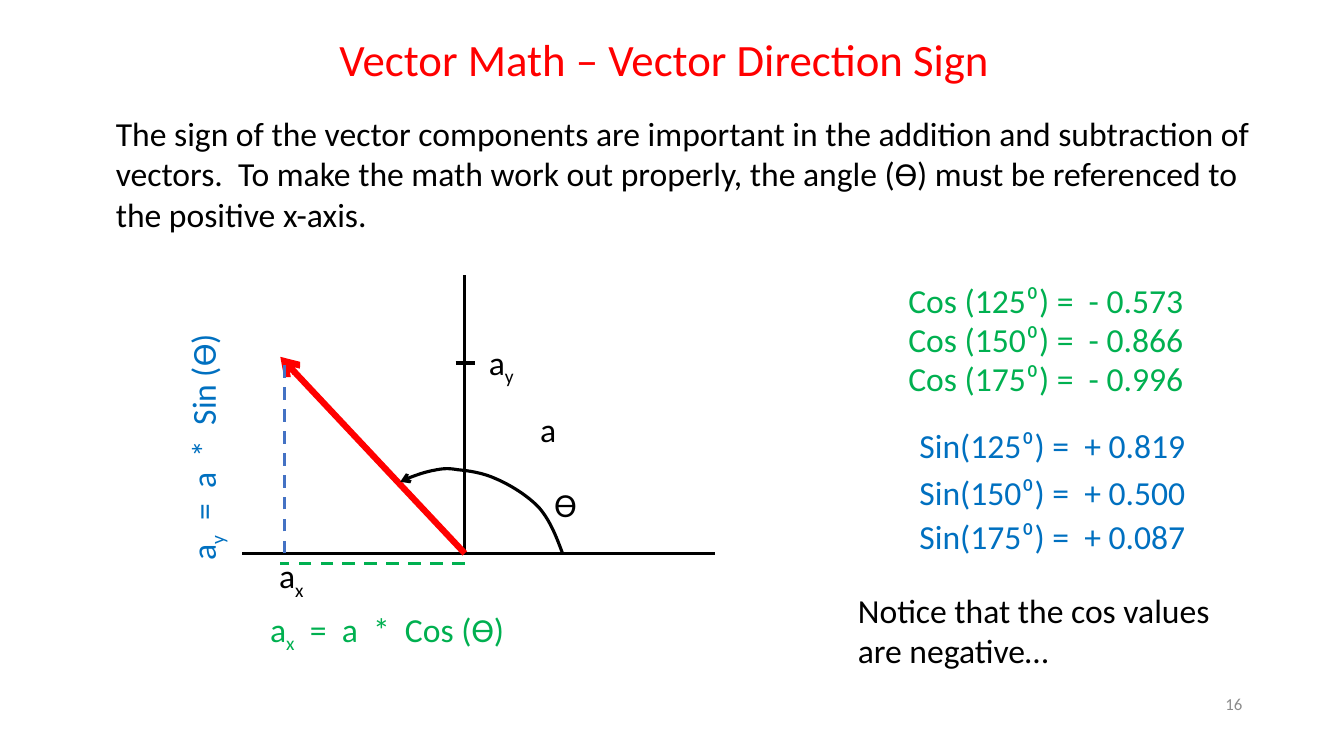
from dataclasses import dataclass

from lxml.etree import SubElement
from pptx import Presentation
from pptx.dml.color import RGBColor
from pptx.enum.dml import MSO_LINE
from pptx.enum.shapes import MSO_CONNECTOR
from pptx.enum.text import MSO_ANCHOR, PP_ALIGN
from pptx.oxml.ns import qn
from pptx.util import Inches, Pt


@dataclass(frozen=True)
class Theme:
    font: str = "Calibri"
    black: str = "000000"
    red: str = "FF0000"
    green: str = "00B050"
    blue: str = "0070C0"
    dash_blue: str = "4472C4"
    grey: str = "8C8C8C"
    title_size: int = 32
    body_size: int = 24
    number_size: int = 12


THEME = Theme()


@dataclass(frozen=True)
class Label:
    text: str
    left: float
    top: float
    width: float
    height: float = 0.5
    color: str = THEME.black
    subscript: str = ""
    rest: str = ""
    rotation: int = 0


@dataclass(frozen=True)
class Stroke:
    start: tuple[float, float]
    end: tuple[float, float]
    color: str = THEME.black
    weight: float = 2.25
    dashed: bool = False
    arrow: bool = False


# Geometry of the diagram
ORIGIN_X, AXIS_Y = 4.61, 5.49
TIP_X, TICK_Y, COS_LINE_Y = 2.78, 3.6, 5.59

STROKES = [
    Stroke((ORIGIN_X, 2.73), (ORIGIN_X, AXIS_Y)),
    Stroke((7.09, AXIS_Y), (2.4, AXIS_Y)),
    Stroke((ORIGIN_X, AXIS_Y), (TIP_X, 3.54), THEME.red, 4.5, arrow=True),
    Stroke((ORIGIN_X, COS_LINE_Y), (TIP_X, COS_LINE_Y), THEME.green, dashed=True),
    Stroke((2.82, AXIS_Y), (2.82, TICK_Y), THEME.dash_blue, dashed=True),
    Stroke((4.52, TICK_Y), (4.71, TICK_Y), weight=3),
]

# Start point, then three Bézier points for each segment
ANGLE_ARC = [
    (5.58, 5.49),
    (5.52, 5.33), (5.46, 5.17), (5.35, 5.04),
    (5.24, 4.92), (5.06, 4.81), (4.92, 4.75),
    (4.79, 4.69), (4.65, 4.67), (4.54, 4.66),
    (4.43, 4.64), (4.38, 4.65), (4.28, 4.67),
    (4.19, 4.69), (3.99, 4.76), (3.97, 4.78),
]

LABELS = [
    Label("ϴ", 5.4, 4.75, 0.45),
    Label("a", 5.26, 4.01, 0.53, 0.66),
    Label("a", 4.75, 3.34, 0.83, 0.66, subscript="y"),
    Label("a", 2.67, 5.46, 0.83, 0.66, subscript="x"),
    Label("a", 2.58, 5.99, 3.42, color=THEME.green, subscript="x",
          rest="  =  a  *  Cos (ϴ)"),
    Label("a", 0.58, 3.98, 2.86, color=THEME.blue, subscript="y",
          rest="  =  a  *  Sin (ϴ)", rotation=270),
    Label("The sign of the vector components are important in the addition and "
          "subtraction of vectors.  To make the math work out properly, the angle "
          "(ϴ) must be referenced to the positive x-axis.", 1.05, 1.07, 11.55, 1.31),
    Label("Notice that the cos values are negative…", 8.41, 5.8, 4.19, 0.91),
]

# Angle, cosine and its top, sine and its top
VALUES = [
    (125, "- 0.573", 2.73, "+ 0.819", 4.17),
    (150, "- 0.866", 3.11, "+ 0.500", 4.63),
    (175, "- 0.996", 3.5, "+ 0.087", 5.07),
]
for angle, cosine, cosine_top, sine, sine_top in VALUES:
    LABELS += [
        Label(f"Cos ({angle}⁰) =  {cosine}", 8.91, cosine_top, 3.42, color=THEME.green),
        Label(f"Sin({angle}⁰) =  {sine}", 9.02, sine_top, 3.42, color=THEME.blue),
    ]


def write_text(shape, text: str, *, size: int = THEME.body_size,
               color: str = THEME.black, align=PP_ALIGN.LEFT,
               anchor=MSO_ANCHOR.TOP, subscript: str = "", rest: str = "") -> None:
    frame = shape.text_frame
    frame.word_wrap = True
    frame.vertical_anchor = anchor
    paragraph = frame.paragraphs[0]
    paragraph.alignment = align
    for part, lowered in ((text, False), (subscript, True), (rest, False)):
        if not part:
            continue
        run = paragraph.add_run()
        run.text = part
        run.font.name = THEME.font
        run.font.size = Pt(size)
        run.font.color.rgb = RGBColor.from_string(color)
        if lowered:
            run._r.get_or_add_rPr().set("baseline", "-25000")


def place(shape, left: float, top: float, width: float, height: float) -> None:
    shape.left, shape.top = Inches(left), Inches(top)
    shape.width, shape.height = Inches(width), Inches(height)


def add_box(slide, left: float, top: float, width: float, height: float):
    return slide.shapes.add_textbox(Inches(left), Inches(top),
                                    Inches(width), Inches(height))


def add_label(slide, label: Label) -> None:
    box = add_box(slide, label.left, label.top, label.width, label.height)
    box.rotation = label.rotation
    write_text(box, label.text, color=label.color,
               subscript=label.subscript, rest=label.rest)


def format_line(line, color: str, weight: float, arrow: bool) -> None:
    line.color.rgb = RGBColor.from_string(color)
    line.width = Pt(weight)
    if arrow:
        SubElement(line._get_or_add_ln(), qn("a:tailEnd"), type="arrow")


def add_stroke(slide, stroke: Stroke) -> None:
    points = [Inches(value) for value in (*stroke.start, *stroke.end)]
    connector = slide.shapes.add_connector(MSO_CONNECTOR.STRAIGHT, *points)
    if stroke.dashed:
        connector.line.dash_style = MSO_LINE.DASH
    format_line(connector.line, stroke.color, stroke.weight, stroke.arrow)
    SubElement(connector._element.spPr, qn("a:effectLst"))


def add_curve(slide, points: list[tuple[float, float]]) -> None:
    start, *others = [(Inches(x), Inches(y)) for x, y in points]
    builder = slide.shapes.build_freeform(*start)
    builder.add_line_segments(others, close=False)
    curve = builder.convert_to_shape()
    curve.shadow.inherit = False
    curve.fill.background()
    format_line(curve.line, THEME.black, 2.25, arrow=True)
    # Join every three straight segments into one cubic segment
    outline = next(curve._element.iter(qn("a:path")))
    segments = outline.findall(qn("a:lnTo"))
    for first in range(0, len(segments), 3):
        cubic = SubElement(outline, qn("a:cubicBezTo"))
        for segment in segments[first:first + 3]:
            cubic.append(segment[0])
            outline.remove(segment)


def main() -> None:
    presentation = Presentation()
    presentation.slide_width = Inches(13.33)
    presentation.slide_height = Inches(7.5)
    slide = presentation.slides.add_slide(presentation.slide_layouts[5])

    # Title
    title = slide.shapes.title
    place(title, 3.24, 0.26, 6.7, 0.64)
    write_text(title, "Vector Math – Vector Direction Sign", size=THEME.title_size,
               color=THEME.red, align=PP_ALIGN.CENTER)

    # Diagram
    for stroke in STROKES:
        add_stroke(slide, stroke)
    add_curve(slide, ANGLE_ARC)

    # Labels, values and explanations
    for label in LABELS:
        add_label(slide, label)

    # Slide number
    number = add_box(slide, 9.42, 6.78, 3, 0.4)
    write_text(number, "16", size=THEME.number_size, color=THEME.grey,
               align=PP_ALIGN.RIGHT, anchor=MSO_ANCHOR.MIDDLE)

    presentation.save("out.pptx")


if __name__ == "__main__":
    main()
